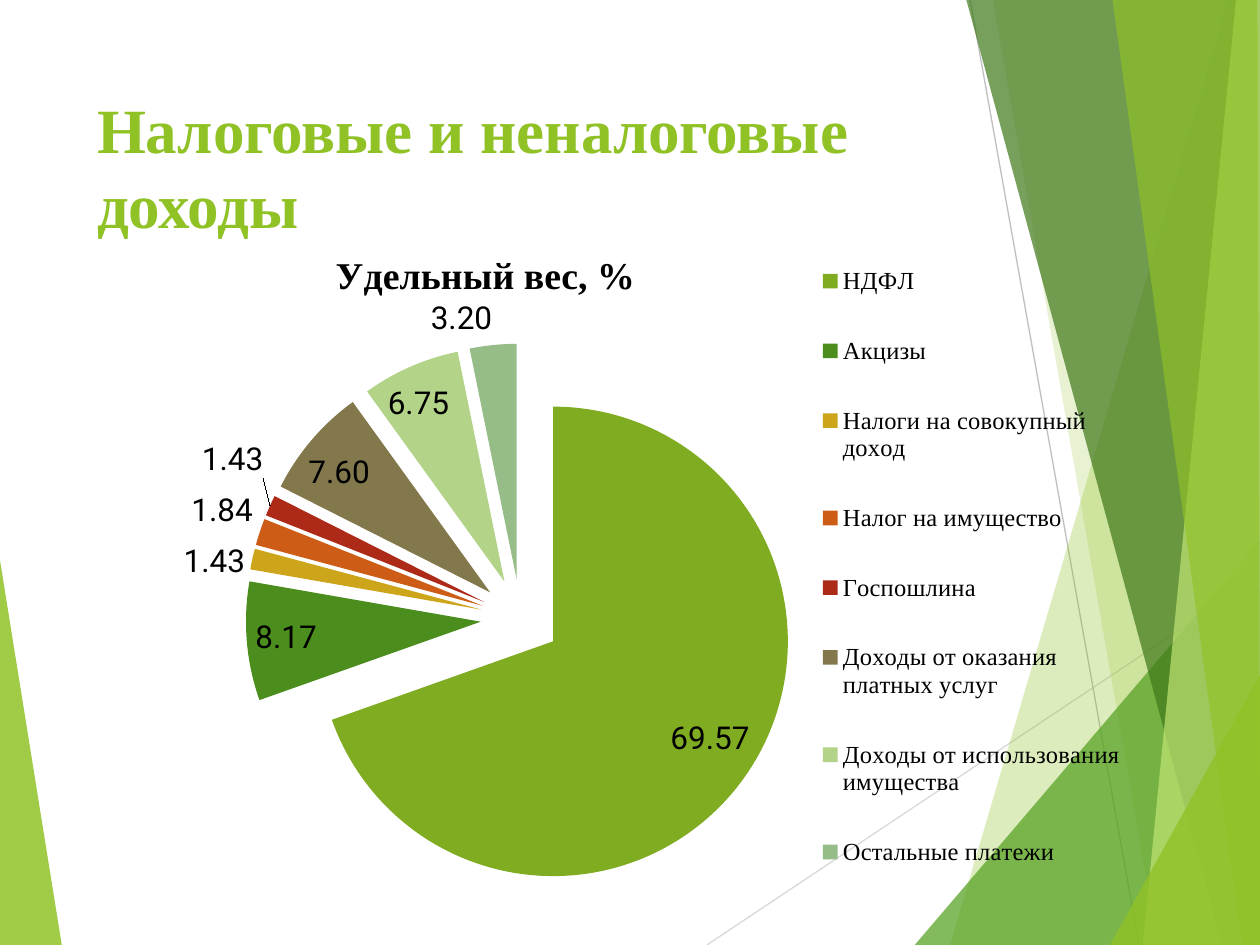
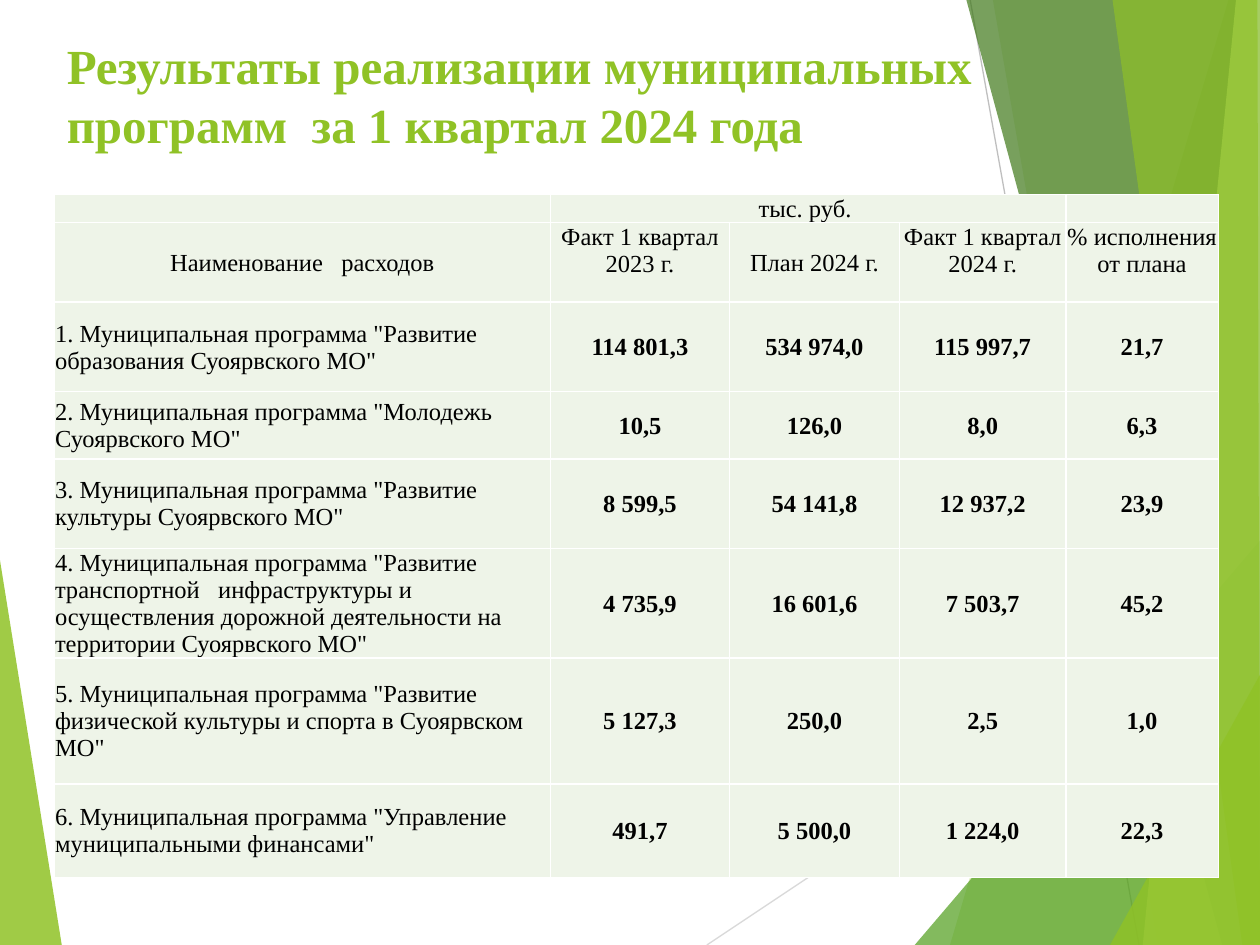
"""Build two slides on municipal revenue shares and programme results."""
from lxml import etree
from pptx import Presentation
from pptx.chart.data import CategoryChartData
from pptx.dml.color import RGBColor
from pptx.enum.chart import XL_CHART_TYPE, XL_LABEL_POSITION, XL_LEGEND_POSITION
from pptx.enum.shapes import MSO_CONNECTOR
from pptx.enum.text import MSO_ANCHOR, MSO_AUTO_SIZE, PP_ALIGN
from pptx.oxml.ns import qn
from pptx.util import Inches, Pt

LIME = RGBColor(0x90, 0xC2, 0x26)
GREEN = RGBColor(0x54, 0xA0, 0x21)
FOREST = RGBColor(0x3F, 0x78, 0x19)
PALE_LIME = RGBColor(0xC0, 0xE4, 0x74)
LIGHT_GREY = RGBColor(0xD9, 0xD9, 0xD9)
GREY = RGBColor(0xBF, 0xBF, 0xBF)
BLACK = RGBColor(0, 0, 0)
CELL = RGBColor(0xEE, 0xF4, 0xE8)
SLICES = [RGBColor(0x80, 0xAC, 0x22), RGBColor(0x4B, 0x8E, 0x1D),
          RGBColor(0xCD, 0xA5, 0x1B), RGBColor(0xCD, 0x5C, 0x16),
          RGBColor(0xAE, 0x2A, 0x18), RGBColor(0x82, 0x78, 0x4C),
          RGBColor(0xB2, 0xD3, 0x88), RGBColor(0x96, 0xBC, 0x87)]
SERIF = "Times New Roman"

prs = Presentation()
prs.slide_width, prs.slide_height = Inches(10), Inches(7.5)
layout = prs.slide_layouts[5]


def share(*percents):
    """Turn alternating x and y percentages of the slide into lengths."""
    sides = (prs.slide_width, prs.slide_height)
    return [int(v * sides[i % 2] / 100) for i, v in enumerate(percents)]


def place(el, index, target=None, **percents):
    """Give a chart part a manual layout in percentages of the chart."""
    for old in el.findall(qn("c:layout")):
        el.remove(old)
    box = etree.Element(qn("c:layout"))
    manual = etree.SubElement(box, qn("c:manualLayout"))
    if target:
        etree.SubElement(manual, qn("c:layoutTarget"), val=target)
    for side in "xy":
        etree.SubElement(manual, qn(f"c:{side}Mode"), val="edge")
    for side, value in percents.items():
        etree.SubElement(manual, qn(f"c:{side}"), val=str(value / 100))
    el.insert(index, box)


titles = [
    ("Налоговые и неналоговые доходы", 36, (6.7, 8.9, 74.8, 19.2)),
    ("Результаты реализации муниципальных \vпрограмм  за 1 квартал 2024 года",
     28, (4.3, 3.1, 87.4, 19.2)),
]
for text, size, box in titles:
    s = prs.slides.add_slide(layout)
    title = s.shapes.title
    title.left, title.top, title.width, title.height = share(*box)
    tf = title.text_frame
    tf.text = text
    tf.word_wrap, tf.auto_size = True, MSO_AUTO_SIZE.NONE
    tf.vertical_anchor = MSO_ANCHOR.TOP
    p = tf.paragraphs[0]
    p.alignment, p.line_spacing = PP_ALIGN.LEFT, 1.0
    for r in p.runs:
        for key, value in dict(name=SERIF, size=Pt(size), bold=True).items():
            setattr(r.font, key, value)
        r.font.color.rgb = LIME
s1, s2 = prs.slides

rays = [((56.1, 100, 100, 61), LIGHT_GREY), ((77, 0, 90.4, 100), GREY)]
for ends, color in rays:
    ray = s1.shapes.add_connector(MSO_CONNECTOR.STRAIGHT, *share(*ends))
    ray.line.color.rgb, ray.line.width = color, Pt(0.75)
    etree.SubElement(ray.element.spPr, qn("a:effectLst"))
    layout.shapes.element.append(ray.element)

facets = [
    ((0, 59.3, 4.9, 100, 0, 100), LIME, 85),
    ((97.5, 0, 75.4, 100, 100, 100, 100, 0), LIME, 30),
    ((78.8, 0, 91.9, 100, 100, 100, 100, 0), LIME, 20),
    ((72.6, 100, 100, 57.2, 100, 100), GREEN, 72),
    ((76.7, 0, 97, 100, 100, 100, 100, 0), FOREST, 70),
    ((98.1, 0, 90.7, 100, 100, 100, 100, 0), PALE_LIME, 70),
    ((88.3, 0, 98.6, 100, 100, 100, 99.8, 0), LIME, 65),
    ((88.1, 100, 100, 71.4, 100, 100), LIME, 80),
]
for corners, color, opacity in facets:
    xy = share(*corners)
    points = list(zip(xy[::2], xy[1::2]))
    builder = s1.shapes.build_freeform(*points[0])
    builder.add_line_segments(points[1:], close=True)
    sp = builder.convert_to_shape()
    sp.shadow.inherit = False
    sp.line.fill.background()
    sp.fill.solid()
    sp.fill.fore_color.rgb = color
    clr = sp.element.spPr.find(".//" + qn("a:srgbClr"))
    etree.SubElement(clr, qn("a:alpha"), val=str(opacity * 1000))
    layout.shapes.element.append(sp.element)

incomes = {
    "НДФЛ": 69.57,
    "Акцизы": 8.17,
    "Налоги на совокупный доход": 1.43,
    "Налог на имущество": 1.84,
    "Госпошлина": 1.43,
    "Доходы от оказания платных услуг": 7.6,
    "Доходы от использования имущества": 6.75,
    "Остальные платежи": 3.2,
}
data = CategoryChartData(number_format="0.00")
data.categories = list(incomes)
data.add_series("Удельный вес, %", list(incomes.values()))
chart = s1.shapes.add_chart(XL_CHART_TYPE.PIE, *share(6.7, 21.6, 89.8, 74.5), data).chart
chart.font.name, chart.font.size = "Roboto", Pt(18)
chart.font.color.rgb = BLACK

tf = chart.chart_title.text_frame
tf.text = "Удельный вес, %"
font = tf.paragraphs[0].runs[0].font
for key, value in dict(name=SERIF, size=Pt(21.6), bold=True).items():
    setattr(font, key, value)
font.color.rgb = BLACK

chart.has_legend = True
legend = chart.legend
legend.position, legend.include_in_layout = XL_LEGEND_POSITION.RIGHT, False
legend.font.name, legend.font.size = SERIF, Pt(14)
legend.font.color.rgb = BLACK

plot = chart.plots[0]
plot.has_data_labels = True
labels = plot.data_labels
for key, value in dict(show_value=True, show_percentage=False, number_format="0.00",
                       number_format_is_linked=False,
                       position=XL_LABEL_POSITION.BEST_FIT).items():
    setattr(labels, key, value)
labels.font.name, labels.font.size = "Roboto", Pt(18)
labels.font.color.rgb = BLACK
for i, color in enumerate(SLICES):
    fill = plot.series[0].points[i].format.fill
    fill.solid()
    fill.fore_color.rgb = color
root = chart.element
for point in root.iter(qn("c:dPt")):
    explosion = etree.Element(qn("c:explosion"), val="17")
    point.find(qn("c:spPr")).addprevious(explosion)
place(root.find(".//" + qn("c:title")), 1, x=21.6, y=5.6)
place(root.find(".//" + qn("c:plotArea")), 0, "inner", x=17.8, y=25.5, w=41.5, h=66.7)
place(legend._element, 1, x=63.9, y=3, w=29, h=97)

rows = [
    ("", "тыс. руб. ", "", "", ""),
    ("Наименование   расходов", "Факт 1 квартал 2023 г.", "План 2024 г.",
     "Факт 1 квартал 2024 г.", "% исполнения от плана"),
    ('1. Муниципальная программа "Развитие образования Суоярвского МО"',
     "114 801,3", "534 974,0", "115 997,7", "21,7"),
    ('2. Муниципальная программа "Молодежь Суоярвского МО"',
     "10,5", "126,0", "8,0", "6,3"),
    ('3. Муниципальная программа "Развитие культуры Суоярвского МО"',
     "8 599,5", "54 141,8", "12 937,2", "23,9"),
    ('4. Муниципальная программа "Развитие транспортной   инфраструктуры и '
     'осуществления дорожной деятельности на территории Суоярвского МО"',
     "4 735,9", "16 601,6", "7 503,7", "45,2"),
    ('5. Муниципальная программа "Развитие физической культуры и спорта в Суоярвском МО"',
     "5 127,3", "250,0", "2,5", "1,0"),
    ('6. Муниципальная программа "Управление муниципальными финансами"',
     "491,7", "5 500,0", "1 224,0", "22,3"),
]
widths = [39.4, 14.2, 13.5, 13.2, 12.1]
heights = [2.9, 8.4, 9.5, 7.1, 9.5, 11.6, 13.3, 9.9]
table = s2.shapes.add_table(len(rows), len(widths), *share(4.3, 20.6, 92.4, 72.2)).table
table.first_row = table.horz_banding = False
for col, width in zip(table.columns, widths):
    col.width = share(width)[0]
for row, height in zip(table.rows, heights):
    row.height = share(0, height)[1]
table.cell(0, 1).merge(table.cell(0, 3))

for i, texts in enumerate(rows):
    for j, text in enumerate(texts):
        cell = table.cell(i, j)
        top = i == 1 and j in (1, 3, 4)
        for key, value in dict(margin_left=Pt(0.5), margin_right=Pt(0.5),
                               margin_top=Pt(0.5), margin_bottom=0,
                               vertical_anchor=MSO_ANCHOR.TOP if top else MSO_ANCHOR.MIDDLE).items():
            setattr(cell, key, value)
        for side in "LRTB":
            ln = etree.SubElement(cell._tc.tcPr, qn(f"a:ln{side}"), w=str(Pt(1)))
            solid = etree.SubElement(ln, qn("a:solidFill"))
            etree.SubElement(solid, qn("a:srgbClr"), val="FFFFFF")
        cell.fill.solid()
        cell.fill.fore_color.rgb = CELL
        p = cell.text_frame.paragraphs[0]
        p.alignment = PP_ALIGN.LEFT if i > 1 and j == 0 else PP_ALIGN.CENTER
        if not text:
            end = etree.SubElement(p._p, qn("a:endParaRPr"), sz="1400")
            etree.SubElement(end, qn("a:latin"), typeface=SERIF)
            continue
        r = p.add_run()
        r.text = text
        for key, value in dict(name=SERIF, size=Pt(14), bold=i > 1 and j > 0).items():
            setattr(r.font, key, value)
        r.font.color.rgb = BLACK

prs.save("out.pptx")
